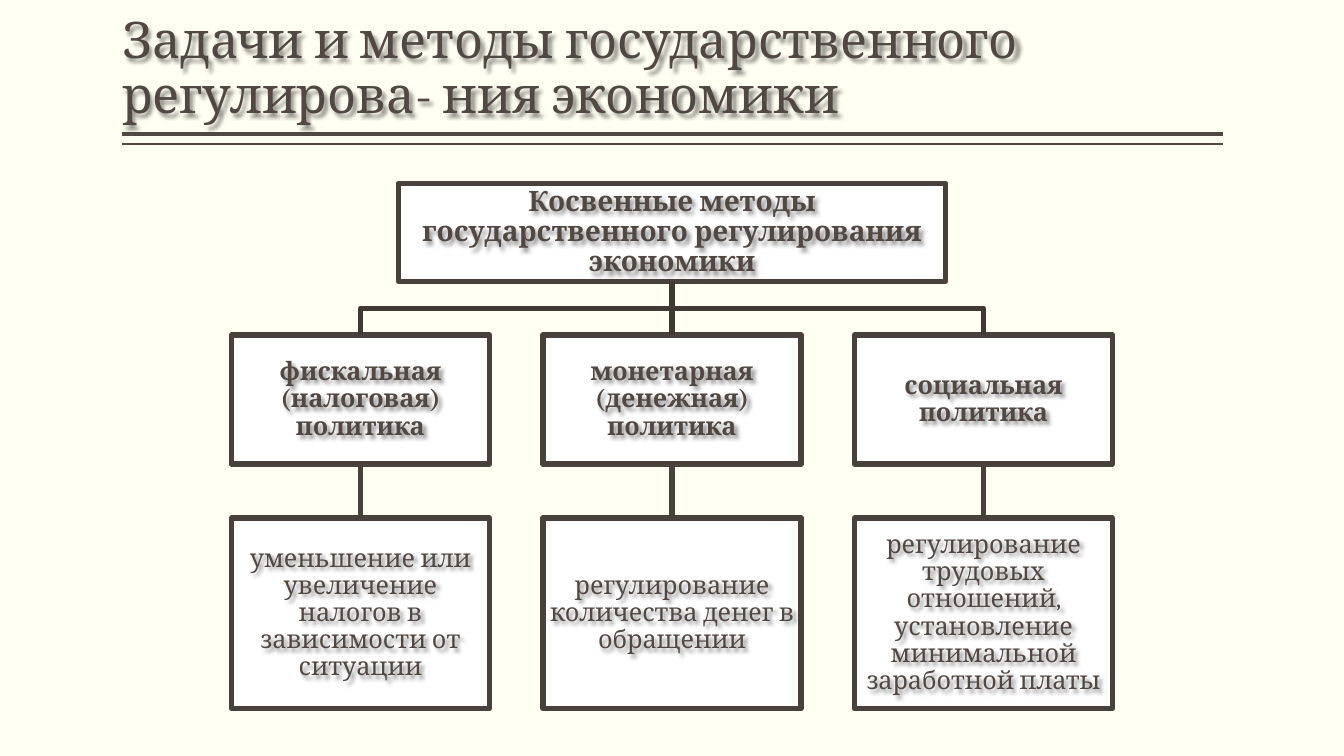
from lxml.etree import SubElement
from pptx import Presentation
from pptx.dml.color import RGBColor
from pptx.enum.shapes import MSO_CONNECTOR, MSO_SHAPE
from pptx.enum.text import MSO_ANCHOR, PP_ALIGN
from pptx.oxml.ns import qn
from pptx.util import Inches, Pt

COLORS = {"paper": "FFFFF3", "text": "514843", "box": "FFFFFF",
          "border": "49413C", "branch": "403934", "shadow": "000000"}
FONT = "Cambria"
BOX_LINE = 3.78

# Grid, in percent of the slide's width or height
MIDDLE = 50
COL_STEP, COL_W = 23.18, 19.2
ROOT_W = 40.74
TOP, GAP = 24.27, 7.13
ROOT_H, POLICY_H, MEASURE_H = 12.93, 17.07, 25.2
TITLE_X, TITLE_W = 9.08, 81.92

POLICIES = [
    ("фискальная (налоговая) политика",
     "уменьшение или увеличение налогов в зависимости от ситуации"),
    ("монетарная (денежная) политика",
     "регулирование количества денег в обращении"),
    ("социальная политика",
     "регулирование трудовых отношений, установление минимальной заработной платы"),
]


def rgb(name):
    return RGBColor.from_string(COLORS[name])


class SlideBuilder:
    def __init__(self, prs):
        self.prs = prs
        self.s = prs.slides.add_slide(prs.slide_layouts[6])
        self.s.background.fill.solid()
        self.s.background.fill.fore_color.rgb = rgb("paper")

    def x(self, share):
        return round(self.prs.slide_width * share / 100)

    def y(self, share):
        return round(self.prs.slide_height * share / 100)

    def area(self, left, top, width, height):
        return self.x(left), self.y(top), self.x(width), self.y(height)

    def stroke(self, sp, color, width):
        sp.line.color.rgb = rgb(color)
        sp.line.width = Pt(width)
        SubElement(sp._element.spPr.find(qn("a:ln")), qn("a:round"))

    def text(self, area, text, size, bold=False, align=PP_ALIGN.CENTER,
             anchor=MSO_ANCHOR.MIDDLE, inset_x=0.01, inset_y=0.01):
        sp = self.s.shapes.add_textbox(*self.area(*area))
        tf = sp.text_frame
        tf.word_wrap = True
        tf.vertical_anchor = anchor
        tf.margin_left = tf.margin_right = Inches(inset_x)
        tf.margin_top = tf.margin_bottom = Inches(inset_y)
        p = tf.paragraphs[0]
        p.text = text
        p.alignment = align
        p.line_spacing = 0.9
        p.font.name, p.font.size, p.font.bold = FONT, Pt(size), bold
        p.font.color.rgb = rgb("text")
        # Soft shadow cast by the letters of the unfilled box
        effects = SubElement(sp._element.spPr, qn("a:effectLst"))
        shadow = SubElement(effects, qn("a:outerShdw"), blurRad="38100",
                            dist="38100", dir="2700000", algn="tl")
        color = SubElement(shadow, qn("a:srgbClr"), val=COLORS["shadow"])
        SubElement(color, qn("a:alpha"), val="43000")

    def box(self, center, top, width, height, text, size, bold=False):
        area = (center - width / 2, top, width, height)
        sp = self.s.shapes.add_shape(MSO_SHAPE.RECTANGLE, *self.area(*area))
        sp.shadow.inherit = False
        sp.fill.solid()
        sp.fill.fore_color.rgb = rgb("box")
        self.stroke(sp, "border", BOX_LINE)
        self.text(area, text, size, bold)
        return sp

    def line(self, x1, y1, x2, y2, color, width):
        sp = self.s.shapes.add_connector(MSO_CONNECTOR.STRAIGHT, self.x(x1),
                                         self.y(y1), self.x(x2), self.y(y2))
        SubElement(sp._element.spPr, qn("a:effectLst"))
        self.stroke(sp, color, width)
        return sp

    def link(self, upper, lower, center, top, color):
        sp = self.line(center, top, center, top + GAP, color, BOX_LINE)
        sp.begin_connect(upper, 2)
        sp.end_connect(lower, 0)

    def elbow(self, x1, x2, top):
        bend = self.y(top + GAP / 2)
        fb = self.s.shapes.build_freeform(self.x(x1), self.y(top))
        fb.add_line_segments([(self.x(x1), bend), (self.x(x2), bend),
                              (self.x(x2), self.y(top + GAP))], close=False)
        sp = fb.convert_to_shape()
        sp.shadow.inherit = False
        sp.fill.background()
        self.stroke(sp, "branch", BOX_LINE)


def main():
    prs = Presentation()
    prs.slide_width, prs.slide_height = Inches(13.33), Inches(7.5)
    slide = SlideBuilder(prs)

    # Title with a double rule below
    for rule_y, width in ((17.73, 3), (19.07, 1)):
        slide.line(TITLE_X, rule_y, TITLE_X + TITLE_W, rule_y, "text", width)
    slide.text((TITLE_X, 1.07, TITLE_W, 16),
               "Задачи и методы государственного регулирова- ния экономики", 36,
               align=PP_ALIGN.LEFT, anchor=MSO_ANCHOR.BOTTOM,
               inset_x=0, inset_y=0.05)

    # Root of the hierarchy
    root = slide.box(MIDDLE, TOP, ROOT_W, ROOT_H,
                     "Косвенные методы государственного регулирования экономики",
                     20, bold=True)

    # One column per policy: its name and its measure
    root_end = TOP + ROOT_H
    policy_top = root_end + GAP
    policy_end = policy_top + POLICY_H
    for i, (name, measure) in enumerate(POLICIES):
        center = MIDDLE + (i - 1) * COL_STEP
        policy = slide.box(center, policy_top, COL_W, POLICY_H, name, 18, bold=True)
        action = slide.box(center, policy_end + GAP, COL_W, MEASURE_H, measure, 18)
        slide.link(policy, action, center, policy_end, "border")
        if center == MIDDLE:
            slide.link(root, policy, center, root_end, "branch")
        else:
            slide.elbow(MIDDLE, center, root_end)

    prs.save("out.pptx")


if __name__ == "__main__":
    main()
